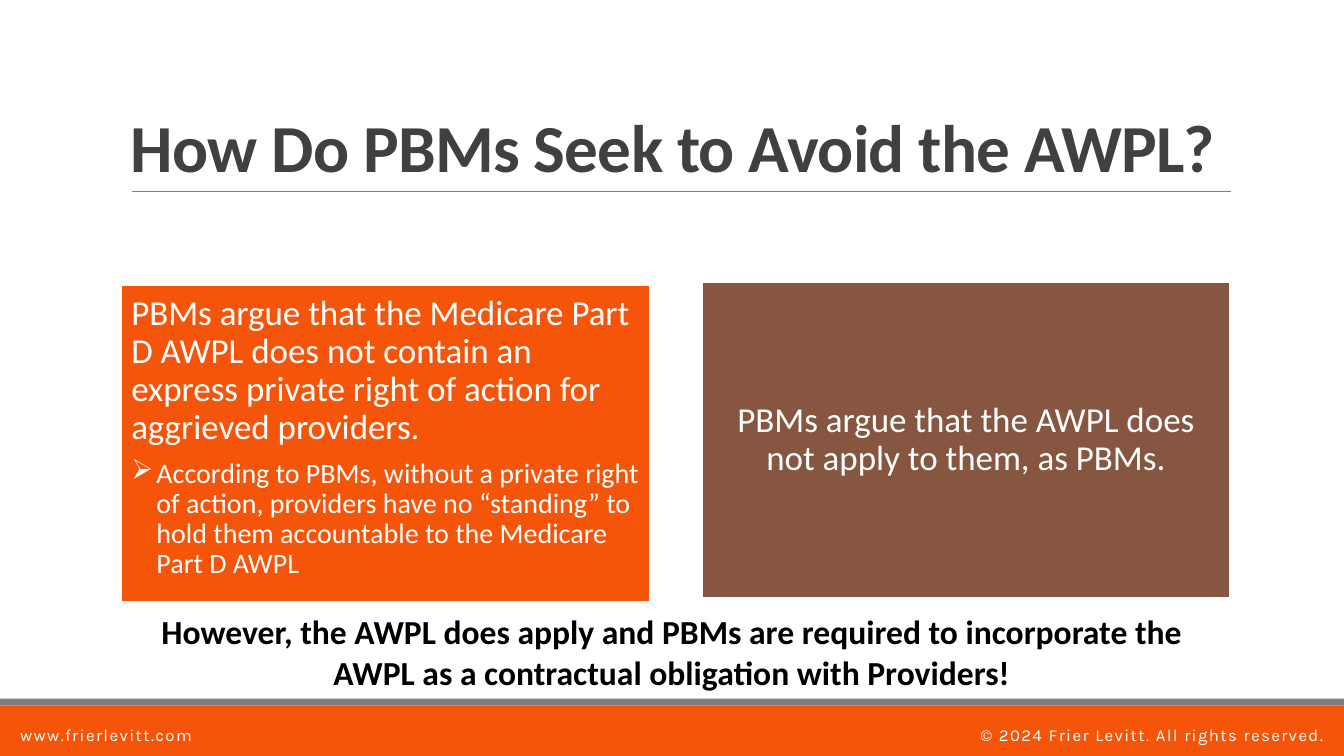
import pptx
import pptx.util
import pptx.dml.color
import pptx.enum.shapes
import pptx.enum.text
import pptx.oxml.ns
import lxml.etree

Pt = pptx.util.Pt
RGBColor = pptx.dml.color.RGBColor
ALIGN = pptx.enum.text.PP_ALIGN
ANCHOR = pptx.enum.text.MSO_ANCHOR
qn = pptx.oxml.ns.qn

ORANGE = RGBColor(0xF5, 0x55, 0x0A)
BROWN = RGBColor(0x86, 0x56, 0x40)
BAND_GREY = RGBColor(0x7F, 0x7F, 0x7F)
RULE_GREY = RGBColor(0x80, 0x80, 0x80)
TITLE_GREY = RGBColor(0x40, 0x40, 0x40)
WHITE = RGBColor(0xFF, 0xFF, 0xFF)
BLACK = RGBColor(0, 0, 0)

SLIDE_WIDTH, SLIDE_HEIGHT = 960, 540
CARD_WIDTH, CARD_HEIGHT = 377.3, 226.1
DEFAULT_INSETS = (7.2, 3.6)
CARD_INSETS = (7.2, 7.2)
FOOTER_INSETS = (14.4, 7.2)


def add_block(page, place, fill, outline=None):
    """Add a filled rectangle, with an outline if a colour is given."""
    kind = pptx.enum.shapes.MSO_SHAPE.RECTANGLE
    block = page.shapes.add_shape(kind, *map(Pt, place))
    block.shadow.inherit = False
    block.fill.solid()
    block.fill.fore_color.rgb = fill
    if outline is None:
        block.line.fill.background()
    else:
        block.line.color.rgb = outline
        block.line.width = Pt(1.25)
    return block


def add_rule(page, left, right, top):
    """Add the thin line below the title."""
    kind = pptx.enum.shapes.MSO_CONNECTOR.STRAIGHT
    rule = page.shapes.add_connector(kind, Pt(left), Pt(top), Pt(right), Pt(top))
    rule.line.color.rgb = RULE_GREY
    rule.line.width = Pt(0.5)
    lxml.etree.SubElement(rule.element.spPr, qn("a:effectLst"))


def set_frame(shape, insets, anchor=ANCHOR.TOP):
    """Set wrapping, margins and anchor of a shape's text."""
    across, down = insets
    values = {
        "word_wrap": True,
        "vertical_anchor": anchor,
        "margin_left": Pt(across),
        "margin_right": Pt(across),
        "margin_top": Pt(down),
        "margin_bottom": Pt(down),
    }
    for name, value in values.items():
        setattr(shape.text_frame, name, value)
    return shape.text_frame


def write(para, text, font, spacing=None, bullet=None, **layout):
    """Fill a paragraph with one span, formatted from the given values."""
    if bullet:
        properties = para._p.get_or_add_pPr()
        properties.set("marL", str(Pt(18)))
        properties.set("indent", str(Pt(-18)))
        lxml.etree.SubElement(properties, qn("a:buChar")).set("char", bullet)
    layout = {"alignment": ALIGN.LEFT, **layout}
    for name, value in layout.items():
        setattr(para, name, value)
    span = para.add_run()
    span.text = text
    values = {"name": "Calibri", **font}
    colour = values.pop("color")
    for name, value in values.items():
        setattr(span.font, name, value)
    span.font.color.rgb = colour
    if spacing:
        span.font._element.set("spc", str(round(spacing * 100)))


def add_text(page, place, text, font, insets=DEFAULT_INSETS,
             anchor=ANCHOR.TOP, **layout):
    """Add a text box that holds one paragraph."""
    box = page.shapes.add_textbox(*map(Pt, place))
    frame = set_frame(box, insets, anchor)
    write(frame.paragraphs[0], text, font, **layout)


def add_card(page, left, top, fill, anchor, alignment, text, detail=None):
    """Add a coloured card with a statement and an optional bullet."""
    card = add_block(page, (left, top, CARD_WIDTH, CARD_HEIGHT), fill, WHITE)
    frame = set_frame(card, CARD_INSETS, anchor)
    write(frame.paragraphs[0], text, {"size": Pt(25), "color": WHITE},
          alignment=alignment, line_spacing=0.9, space_after=Pt(8.75))
    if detail:
        write(frame.add_paragraph(), detail, {"size": Pt(20), "color": WHITE},
              bullet="➢", line_spacing=0.9, space_after=Pt(3))


def add_footer(page):
    """Add the footer bands, web address and copyright line."""
    add_block(page, (0, 504, SLIDE_WIDTH, 36), ORANGE)
    add_block(page, (0, 499, SLIDE_WIDTH, 5), BAND_GREY)
    font = {"name": "Karla", "size": Pt(12), "color": WHITE}
    lines = [
        (596, 364, ALIGN.RIGHT, "© 2024 Frier Levitt. All rights reserved."),
        (0, 309, ALIGN.LEFT, "www.frierlevitt.com"),
    ]
    for left, width, alignment, text in lines:
        add_text(page, (left, 510.5, width, 29), text, font,
                 insets=FOOTER_INSETS, spacing=1, alignment=alignment)


def main():
    deck = pptx.Presentation()
    deck.slide_width, deck.slide_height = Pt(SLIDE_WIDTH), Pt(SLIDE_HEIGHT)
    page = deck.slides.add_slide(deck.slide_layouts[6])

    add_footer(page)

    # Title
    add_rule(page, 94.3, 879, 136.5)
    add_text(page, (86.4, 22.3, 792, 114.5),
             "How Do PBMs Seek to Avoid the AWPL?",
             {"size": Pt(48), "bold": True, "color": TITLE_GREY},
             anchor=ANCHOR.BOTTOM, spacing=-0.5, line_spacing=0.85)

    # The two arguments
    add_card(page, 86.7, 204, ORANGE, ANCHOR.TOP, ALIGN.LEFT,
             "PBMs argue that the Medicare Part D AWPL does not contain an "
             "express private right of action for aggrieved providers.",
             "According to PBMs, without a private right of action, providers "
             "have no “standing” to hold them accountable to the Medicare "
             "Part D AWPL")
    add_card(page, 501.3, 201.2, BROWN, ANCHOR.MIDDLE, ALIGN.CENTER,
             "PBMs argue that the AWPL does not apply to them, as PBMs.")

    # Conclusion
    add_text(page, (94.3, 433, 771, 65.4),
             "However, the AWPL does apply and PBMs are required to incorporate "
             "the AWPL as a contractual obligation with Providers!",
             {"size": Pt(24), "bold": True, "color": BLACK},
             alignment=ALIGN.CENTER)

    deck.save("out.pptx")


if __name__ == "__main__":
    main()
